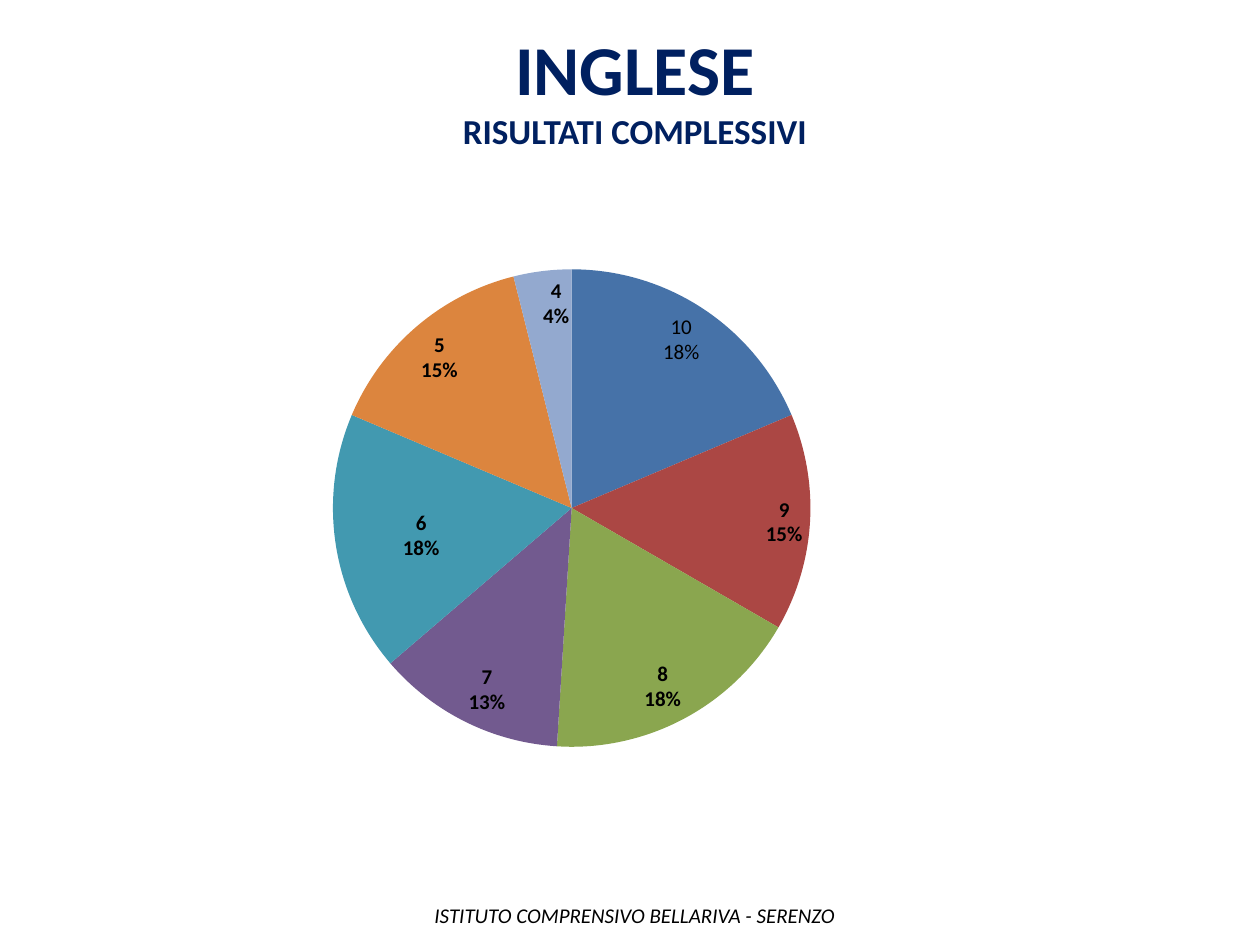
from dataclasses import dataclass

from lxml.etree import SubElement
from pptx import Presentation
from pptx.chart.data import CategoryChartData
from pptx.dml.color import RGBColor
from pptx.enum.chart import XL_CHART_TYPE as ChartType, XL_LABEL_POSITION as LabelPosition
from pptx.enum.text import PP_ALIGN as Align
from pptx.oxml import parse_xml
from pptx.oxml.ns import nsdecls, qn
from pptx.util import Cm, Pt


@dataclass(frozen=True)
class Theme:
    font: str = "Calibri"
    navy: str = "002060"
    black: str = "000000"
    slices: tuple = ("4672A8", "AB4744", "8AA64F", "725A8F", "4299B0", "DC853E", "93A9CF")
    title: int = 40
    subtitle: int = 20
    small: int = 12


THEME = Theme()
GRADES = ("10", "9", "8", "7", "6", "5", "4")
SHARES = (19, 15, 18, 13, 18, 15, 4)


def style_font(font, size, color, bold=False, italic=False):
    font.name, font.size = THEME.font, Pt(size)
    font.bold, font.italic = bold, italic
    font.color.rgb = RGBColor.from_string(color)


def add_text(slide, box, text, sizes, color, align, **emphasis):
    """Add a text box whose paragraphs take the given sizes in turn."""
    text_frame = slide.shapes.add_textbox(*map(Cm, box)).text_frame
    text_frame.word_wrap = True
    text_frame.text = text
    for paragraph, size in zip(text_frame.paragraphs, sizes):
        paragraph.alignment = align
        style_font(paragraph.runs[0].font, size, color, **emphasis)


def manual_layout(target=None, **values):
    """Return a chart layout given in fractions of the chart's size."""
    layout = parse_xml(f"<c:layout {nsdecls('c')}><c:manualLayout/></c:layout>")
    if target:
        values = {"layoutTarget": target, "xMode": "edge", "yMode": "edge", **values}
    for name, value in values.items():
        SubElement(layout[0], qn(f"c:{name}")).set("val", str(value))
    return layout


def label_slices(series):
    first_label = series.points[0].data_label
    first_label.text_frame.text = "10\n18%"
    for paragraph in first_label.text_frame.paragraphs:
        style_font(paragraph.runs[0].font, THEME.small, THEME.black)
    first_label.position = LabelPosition.INSIDE_END

    moved_label = series.points[GRADES.index("6")].data_label
    style_font(moved_label.font, THEME.small, THEME.black, bold=True)
    moved_label.position = LabelPosition.INSIDE_END

    labels = series.data_labels
    style_font(labels.font, THEME.small, THEME.black, bold=True)
    labels.position = LabelPosition.INSIDE_END
    labels.show_value = False
    labels.show_category_name = labels.show_percentage = True
    labels.show_leader_lines = False

    moved_element = labels._element.findall(qn("c:dLbl"))[1]
    moved_element.find(qn("c:idx")).addnext(manual_layout(x=0.06, y=0.03))
    for name, shown in (("showVal", 0), ("showCatName", 1), ("showPercent", 1)):
        moved_element.find(qn(f"c:{name}")).set("val", str(shown))
    for element in (moved_element, labels._element):
        separator = parse_xml(f"<c:separator {nsdecls('c')}>\n</c:separator>")
        anchor = element.find(qn("c:showBubbleSize"))
        if anchor is None:
            anchor = element.find(qn("c:showPercent"))
        anchor.addnext(separator)


def add_grade_pie(slide, box):
    data = CategoryChartData()
    data.categories = GRADES
    data.add_series("Series 1", SHARES)
    chart = slide.shapes.add_chart(ChartType.PIE, *map(Cm, box), data).chart
    chart.has_title = chart.has_legend = False
    style_font(chart.font, THEME.small, THEME.black)

    plot = chart.plots[0]
    plot.vary_by_categories = True
    series = plot.series[0]
    for index, color in enumerate(THEME.slices):
        fill = series.points[index].format.fill
        fill.solid()
        fill.fore_color.rgb = RGBColor.from_string(color)
    label_slices(series)

    plot_area = plot._element.getparent()
    for layout in plot_area.findall(qn("c:layout")):
        plot_area.remove(layout)
    plot_area.insert(0, manual_layout("inner", x=0.28, y=0.13, w=0.48, h=0.84))


def add_results_slide(presentation):
    slide = presentation.slides.add_slide(presentation.slide_layouts[6])
    add_text(slide, (3.5, 0.4, 18.6, 2.82), "INGLESE\nRISULTATI COMPLESSIVI",
             (THEME.title, THEME.subtitle), THEME.navy, Align.CENTER, bold=True)
    add_text(slide, (8.2, 18.06, 9.2, 0.76), "ISTITUTO COMPRENSIVO BELLARIVA - SERENZO",
             (THEME.small,), THEME.black, Align.CENTER, italic=True)
    add_grade_pie(slide, (1.09, 3.94, 20.07, 11.46))


def main():
    presentation = Presentation()
    presentation.slide_width, presentation.slide_height = Cm(25.4), Cm(19.05)
    add_results_slide(presentation)
    presentation.save("out.pptx")


if __name__ == "__main__":
    main()
